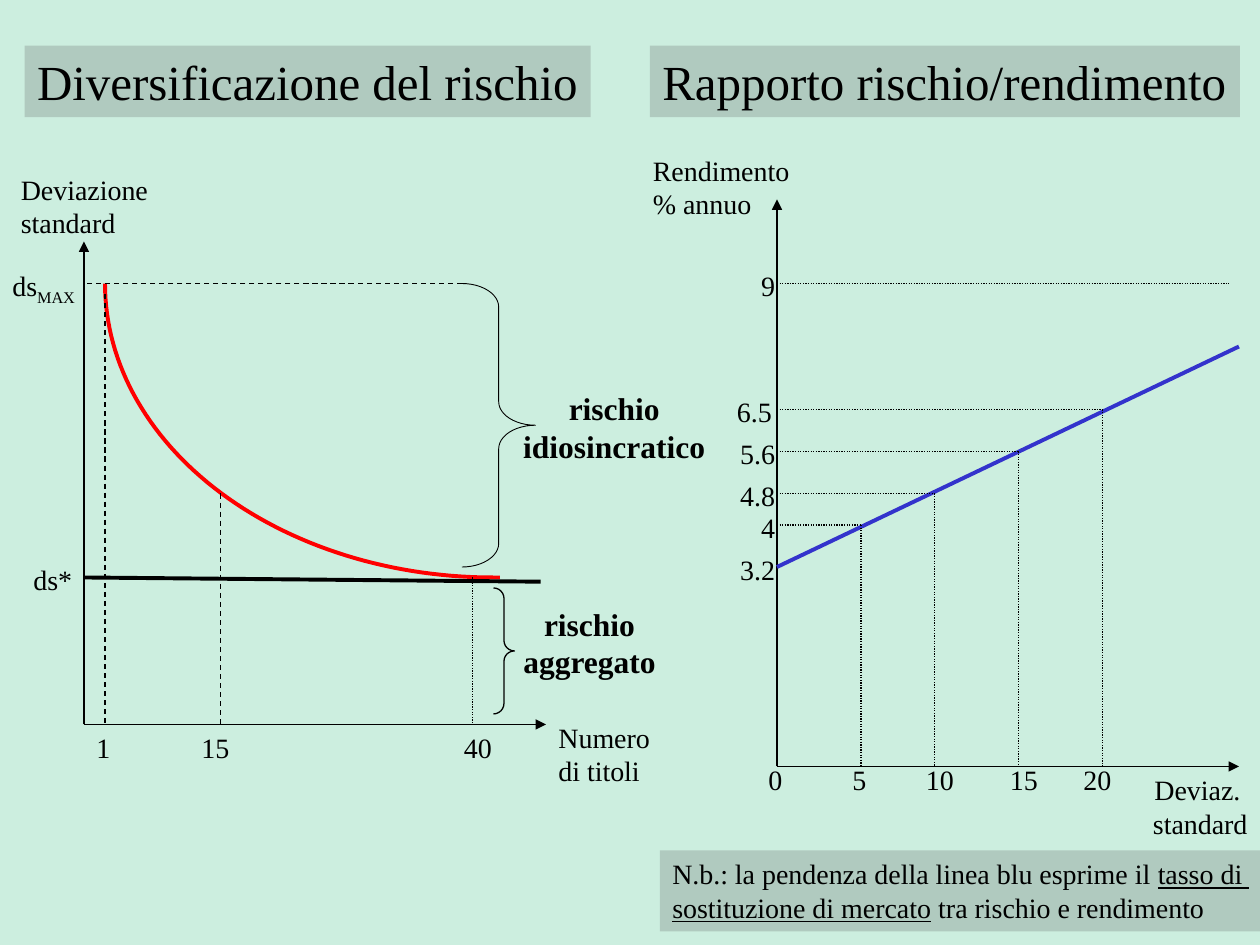
from dataclasses import dataclass
from math import cos, pi, sin

from lxml.etree import SubElement
from pptx import Presentation
from pptx.dml.color import RGBColor
from pptx.enum.dml import MSO_LINE
from pptx.enum.shapes import MSO_CONNECTOR, MSO_SHAPE
from pptx.enum.text import MSO_ANCHOR, MSO_AUTO_SIZE, PP_ALIGN
from pptx.oxml.ns import qn
from pptx.util import Cm, Pt


@dataclass(frozen=True)
class Theme:
    font: str = "Times New Roman"
    background: RGBColor = RGBColor(0xCC, 0xEE, 0xDF)
    ink: RGBColor = RGBColor(0, 0, 0)
    band: RGBColor = RGBColor(0x60, 0x60, 0x60)
    band_alpha: int = 25
    risk_curve: RGBColor = RGBColor(0xFF, 0, 0)
    market_line: RGBColor = RGBColor(0x33, 0x33, 0xCC)
    title: int = 28
    emphasis: int = 18
    label: int = 16
    thin: float = 0.75
    thick: float = 2.25


@dataclass(frozen=True)
class Box:
    """A region measured in grid units; the slide is 120 by 90 of them."""
    left: float
    top: float
    width: float
    height: float

    def inner(self, x, y, width, height):
        return Box(self.left + x, self.top + y, width, height)

    def point(self, x, y):
        return grid(self.left + x), grid(self.top + y)

    def extent(self):
        return *self.point(0, 0), grid(self.width), grid(self.height)


THEME = Theme()
ONE_LINE, TWO_LINES, TWO_BOLD_LINES = 4.4, 7.7, 8.4
ONE_DIGIT, TWO_DIGITS = 3.8, 5.3


def grid(units):
    return Cm(units * 25.4 / 120)


def fill_text(sp, lines, size, align=PP_ALIGN.LEFT, bold=False, wrap=False):
    tf = sp.text_frame
    tf.word_wrap = wrap
    tf.auto_size = MSO_AUTO_SIZE.SHAPE_TO_FIT_TEXT
    tf.vertical_anchor = MSO_ANCHOR.TOP
    for i, line in enumerate(lines):
        p = tf.add_paragraph() if i else tf.paragraphs[0]
        p.alignment = align
        p.font.name, p.font.size, p.font.bold = THEME.font, Pt(size), bold
        p.font.color.rgb = THEME.ink
        p.add_run().text = line
    return tf


def add_label(s, box, *lines, size=THEME.label, **style):
    return fill_text(s.shapes.add_textbox(*box.extent()), lines, size, **style)


def add_line(s, box, start, end, color=THEME.ink, width=THEME.thin, dash=None, arrow=False):
    line = s.shapes.add_connector(MSO_CONNECTOR.STRAIGHT, *box.point(*start), *box.point(*end))
    line.line.color.rgb, line.line.width = color, Pt(width)
    if dash:
        line.line.dash_style = dash
    if arrow:
        SubElement(line._element.spPr.find(qn("a:ln")), qn("a:tailEnd"), type="triangle")
    SubElement(line._element.spPr, qn("a:effectLst"))


def add_axes(s, box):
    origin = (0, box.height)
    for tip in ((0, 0), (box.width, box.height)):
        add_line(s, box, origin, tip, arrow=True)


def add_brace(s, box, curl, width):
    sp = s.shapes.add_shape(MSO_SHAPE.RIGHT_BRACE, *box.extent())
    sp.shadow.inherit = False
    sp.fill.background()
    sp.line.color.rgb, sp.line.width = THEME.ink, Pt(width)
    sp.adjustments[0] = curl


def add_risk_curve(s, box, steps=60):
    """Quarter ellipse, from the box's top left down to just past its lowest point."""
    end = 0.49 * pi
    points = []
    for i in range(steps + 1):
        angle = end * i / steps
        points.append(box.point(box.width * (1 - cos(angle)), box.height * sin(angle)))
    builder = s.shapes.build_freeform(*points[0])
    builder.add_line_segments(points[1:] + [box.point(box.width + 0.6, box.height)], close=False)
    sp = builder.convert_to_shape()
    sp.shadow.inherit = False
    sp.fill.background()
    sp.line.color.rgb, sp.line.width = THEME.risk_curve, Pt(THEME.thick)


def add_band(s, box, lines, size, wrap=False):
    sp = s.shapes.add_shape(MSO_SHAPE.RECTANGLE, *box.extent())
    sp.shadow.inherit = False
    sp.fill.solid()
    sp.fill.fore_color.rgb = THEME.band
    color = sp._element.spPr.find(qn("a:solidFill"))[0]
    SubElement(color, qn("a:alpha"), val=str(THEME.band_alpha * 1000))
    sp.line.fill.background()
    return fill_text(sp, lines, size, wrap=wrap)


def add_diversification_plot(s, box):
    top, floor, bottom = 4, 32, box.height
    add_axes(s, box)
    add_risk_curve(s, box.inner(2, top, 37, floor - top))
    add_line(s, box, (0, floor), (43.5, floor + 0.4), width=THEME.thick)
    add_line(s, box, (36, top), (0, top), dash=MSO_LINE.DASH)

    for text, x, y, label_left, width, dash in (
        ("1", 2, top + 1, 0, ONE_DIGIT, MSO_LINE.DASH),
        ("15", 13, 24, 10, TWO_DIGITS, MSO_LINE.DASH),
        ("40", 37, floor, 35, TWO_DIGITS, MSO_LINE.ROUND_DOT),
    ):
        add_line(s, box, (x, y), (x, bottom), dash=dash)
        add_label(s, box.inner(label_left, bottom, width, ONE_LINE), text)

    add_brace(s, box.inner(36, top, 7, 27), 0.321, 0.5)
    add_brace(s, box.inner(39, floor + 1, 2, 12), 0.5, THEME.thin)
    for y, width, kind in ((13.5, 19.8, "idiosincratico"), (34, 15.1, "aggregato")):
        add_label(s, box.inner(40.6, y, width, TWO_BOLD_LINES), "rischio", kind,
                  size=THEME.emphasis, align=PP_ALIGN.CENTER, bold=True)

    add_label(s, box.inner(-7.2, -7.2, 15.2, TWO_LINES), "Deviazione", "standard")
    add_label(s, box.inner(box.width, bottom - 1, 11.2, TWO_LINES), "Numero", "di titoli")
    add_label(s, box.inner(-6, floor - 2, 6.1, ONE_LINE), "ds*")
    maximum = add_label(s, box.inner(-8, top - 2, 9.1, ONE_LINE), "ds")
    r = maximum.paragraphs[0].add_run()
    r.text = "MAX"
    r._r.get_or_add_rPr().set("baseline", "-25000")


def add_risk_return_plot(s, box):
    bottom = box.height
    add_axes(s, box)
    add_line(s, box, (0, 35), (box.width, 14), color=THEME.market_line, width=THEME.thick)

    for x, y in ((8, 31), (15, 28), (23, 24), (31, 20)):
        add_line(s, box, (x, y), (x, bottom), dash=MSO_LINE.ROUND_DOT)
        add_line(s, box, (0, y), (x, y), dash=MSO_LINE.ROUND_DOT)
    add_line(s, box, (0, 8), (43, 8), dash=MSO_LINE.ROUND_DOT)

    for text, y, left, width, align in (
        ("9", 8, -6, 7, PP_ALIGN.RIGHT),
        ("6.5", 20, -5, 7, PP_ALIGN.LEFT),
        ("5.6", 24, -6, 7, PP_ALIGN.RIGHT),
        ("4.8", 28, -5, 6, PP_ALIGN.RIGHT),
        ("4", 31, -5, 6, PP_ALIGN.RIGHT),
        ("3.2", 35, -5, 6, PP_ALIGN.RIGHT),
    ):
        add_label(s, box.inner(left, y - 2, width, ONE_LINE), text, align=align, wrap=True)
    for text, left in (("0", -2), ("5", 6), ("10", 13), ("15", 21), ("20", 28)):
        width = ONE_DIGIT if len(text) == 1 else TWO_DIGITS
        add_label(s, box.inner(left, bottom - 1, width, ONE_LINE), text)

    add_label(s, box.inner(-13, -5, 15.5, TWO_LINES), "Rendimento", "% annuo")
    add_label(s, box.inner(34.5, bottom, 11.5, TWO_LINES), "Deviaz. ", "standard",
              align=PP_ALIGN.RIGHT)


def add_note(s, box):
    tf = add_band(s, box, ["N.b.: la pendenza della linea blu esprime il ",
                           "sostituzione di mercato"], THEME.label, wrap=True)
    first, second = tf.paragraphs
    r = first.add_run()
    r.text = "tasso di "
    r.font.underline = True
    second.runs[0].font.underline = True
    second.add_run().text = " tra rischio e rendimento"


def main():
    prs = Presentation()
    prs.slide_width, prs.slide_height = grid(120), grid(90)
    s = prs.slides.add_slide(prs.slide_layouts[6])
    s.background.fill.solid()
    s.background.fill.fore_color.rgb = THEME.background

    add_diversification_plot(s, Box(8, 23, 44, 46))
    add_risk_return_plot(s, Box(74, 19, 44, 54))
    add_band(s, Box(61.9, 4.35, 56.2, 6.8), ["Rapporto rischio/rendimento"], THEME.title)
    add_band(s, Box(2.35, 4.35, 53.9, 6.8), ["Diversificazione del rischio"], THEME.title)
    add_note(s, Box(62.85, 81, 57.8, TWO_LINES))
    prs.save("out.pptx")


if __name__ == "__main__":
    main()
